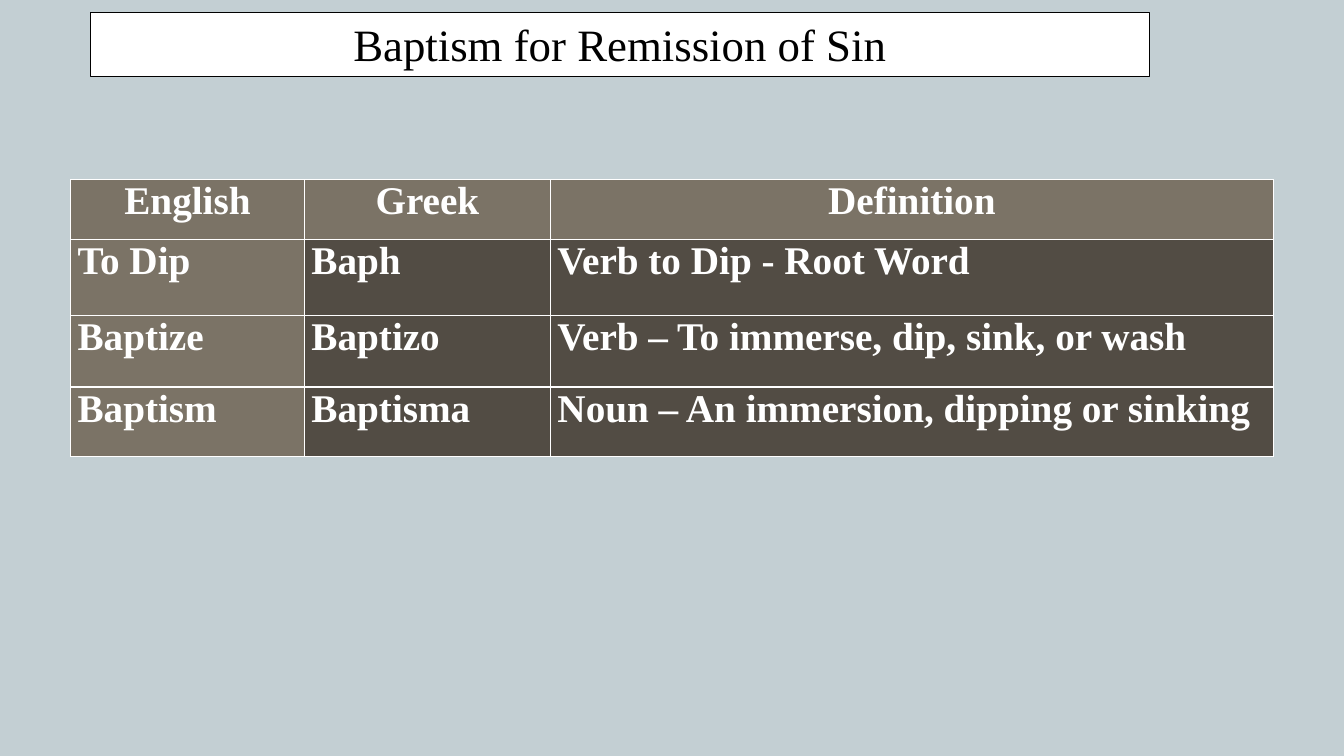
from lxml.etree import SubElement
from pptx import Presentation
from pptx.dml.color import RGBColor
from pptx.enum.shapes import MSO_SHAPE
from pptx.enum.text import MSO_ANCHOR, MSO_AUTO_SIZE, PP_ALIGN
from pptx.oxml.ns import qn
from pptx.util import Inches, Pt

WHITE = RGBColor(0xFF, 0xFF, 0xFF)
BLACK = RGBColor(0x00, 0x00, 0x00)
BACKGROUND = RGBColor(0xC3, 0xCF, 0xD3)
TAUPE = RGBColor(0x7B, 0x73, 0x66)
DARK_TAUPE = RGBColor(0x52, 0x4C, 0x44)


def write(frame, text, size, color, bold=False, align=PP_ALIGN.LEFT):
    para = frame.paragraphs[0]
    para.alignment = align
    span = para.add_run()
    span.text = text
    span.font.name = "Times New Roman"
    span.font.size = Pt(size)
    span.font.bold = bold
    span.font.color.rgb = color


def add_borders(cell, color, width):
    properties = cell._tc.get_or_add_tcPr()
    for side in ("a:lnL", "a:lnR", "a:lnT", "a:lnB"):
        line = SubElement(properties, qn(side), w=str(Pt(width)))
        fill = SubElement(line, qn("a:solidFill"))
        SubElement(fill, qn("a:srgbClr"), val=str(color))


deck = Presentation()
deck.slide_width = Inches(13.33)
deck.slide_height = Inches(7.5)
page = deck.slides.add_slide(deck.slide_layouts[6])
page.background.fill.solid()
page.background.fill.fore_color.rgb = BACKGROUND

# Title box
box = page.shapes.add_shape(
    MSO_SHAPE.RECTANGLE, Inches(0.9), Inches(0.12), Inches(10.5), Inches(0.64))
box.shadow.inherit = False
box.fill.solid()
box.fill.fore_color.rgb = WHITE
box.line.color.rgb = BLACK
box.line.width = Pt(0.75)
box.text_frame.word_wrap = True
box.text_frame.auto_size = MSO_AUTO_SIZE.SHAPE_TO_FIT_TEXT
box.text_frame.vertical_anchor = MSO_ANCHOR.TOP
write(box.text_frame, "Baptism for Remission of Sin", 32, BLACK,
      align=PP_ALIGN.CENTER)

# Word table
words = [
    ("English", "Greek", "Definition"),
    ("To Dip", "Baph", "Verb to Dip - Root Word"),
    ("Baptize", "Baptizo", "Verb – To immerse, dip, sink, or wash"),
    ("Baptism", "Baptisma", "Noun – An immersion, dipping or sinking"),
]
column_widths = [2.32, 2.44, 7.17]
row_heights = [0.6, 0.75, 0.71, 0.69]
table = page.shapes.add_table(
    len(words), len(column_widths), Inches(0.7), Inches(1.78),
    Inches(sum(column_widths)), Inches(sum(row_heights))).table
for column, width in zip(table.columns, column_widths):
    column.width = Inches(width)
for row, height in zip(table.rows, row_heights):
    row.height = Inches(height)

for row_index, row_words in enumerate(words):
    for column_index, word in enumerate(row_words):
        cell = table.cell(row_index, column_index)
        is_heading = row_index == 0 or column_index == 0
        cell.margin_left = cell.margin_right = Inches(0.07)
        cell.margin_top = cell.margin_bottom = 0
        add_borders(cell, WHITE, 1)
        cell.fill.solid()
        cell.fill.fore_color.rgb = TAUPE if is_heading else DARK_TAUPE
        write(cell.text_frame, word, 28, WHITE, bold=True,
              align=PP_ALIGN.CENTER if row_index == 0 else PP_ALIGN.LEFT)

deck.save("out.pptx")
